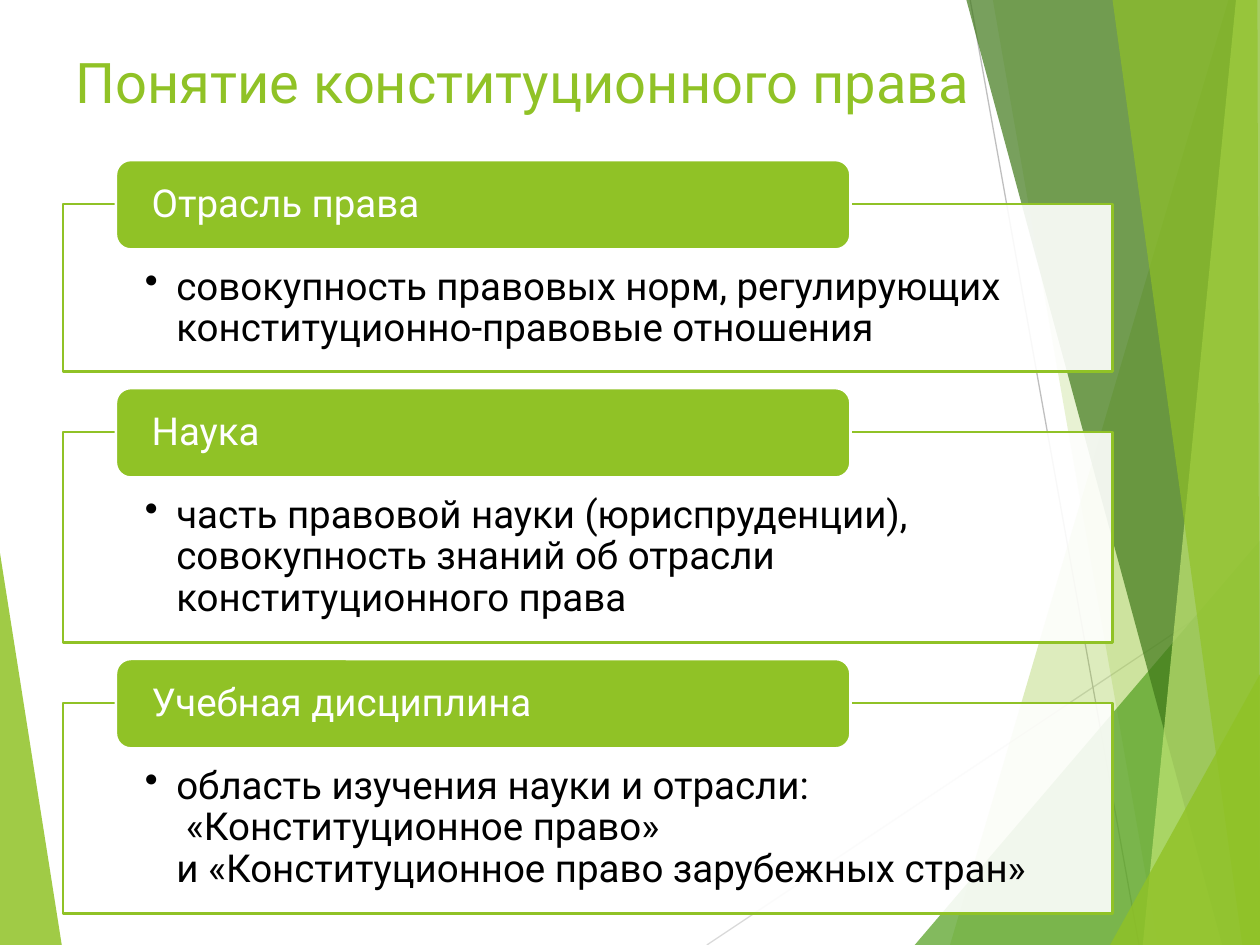
from lxml.etree import SubElement
from pptx import Presentation
from pptx.dml.color import RGBColor
from pptx.enum.shapes import MSO_CONNECTOR, MSO_SHAPE
from pptx.enum.text import MSO_ANCHOR, MSO_AUTO_SIZE, PP_ALIGN
from pptx.oxml.ns import qn
from pptx.util import Inches, Pt

GREEN, WHITE, BLACK = "90C226", "FFFFFF", "000000"

prs = Presentation()
prs.slide_width, prs.slide_height = Inches(10), Inches(7.5)
unit = prs.slide_width / 100  # the grid has 100 columns and 75 rows
slide = prs.slides.add_slide(prs.slide_layouts[5])
shapes = slide.shapes


def grid(*cells):
    return [round(cell * unit) for cell in cells]


def paint(shape, fill, opacity=100, outline=None):
    shape.shadow.inherit = False
    shape.fill.solid()
    shape.fill.fore_color.rgb = RGBColor.from_string(fill)
    if opacity < 100:
        colour = shape.fill._xPr.find(qn("a:solidFill"))[0]
        SubElement(colour, qn("a:alpha"), val=str(opacity * 1000))
    if outline:
        shape.line.color.rgb = RGBColor.from_string(outline)
        shape.line.width = Pt(1.5)
    else:
        shape.line.fill.background()


# Background facets, from back to front; the thin rays lie above the left one
facets = [
    (GREEN, 85, [(0, 43.9), (4.9, 75), (0, 75)]),
    (GREEN, 30, [(97.5, 0), (75.4, 75), (100, 75), (100, 0)]),
    (GREEN, 20, [(78.8, 0), (91.9, 75), (100, 75), (100, 0)]),
    ("54A021", 72, [(72.6, 75), (100, 42.9), (100, 75)]),
    ("3F7819", 70, [(76.7, 0), (97, 75), (100, 75), (100, 0)]),
    ("C0E474", 70, [(98.1, 0), (90.7, 75), (100, 75), (100, 0)]),
    (GREEN, 65, [(88.3, 0), (98.6, 75), (100, 75), (99.8, 0)]),
    (GREEN, 80, [(88.1, 75), (100, 53.5), (100, 75)]),
]
rays = [("D9D9D9", (56.1, 75, 100, 45.7)), ("BFBFBF", (77, 0, 90.4, 75))]

for order, (colour, opacity, corners) in enumerate(facets):
    start, *others = [grid(*corner) for corner in corners]
    outline = shapes.build_freeform(*start)
    outline.add_line_segments(others, close=True)
    paint(outline.convert_to_shape(), colour, opacity)
    if order == 0:
        for ray_colour, ends in rays:
            ray = shapes.add_connector(MSO_CONNECTOR.STRAIGHT, *grid(*ends))
            ray.line.color.rgb = RGBColor.from_string(ray_colour)
            ray.line.width = Pt(0.75)
            SubElement(ray.element.spPr, qn("a:effectLst"))

# Title, brought in front of the facets
title = shapes.title
title.left, title.top, title.width, title.height = grid(5, 3, 83.3, 6.9)
title.element.getparent().append(title.element)
title.text_frame.auto_size = MSO_AUTO_SIZE.NONE
title.text_frame.vertical_anchor = MSO_ANCHOR.MIDDLE
heading = title.text_frame.paragraphs[0]
heading.alignment = PP_ALIGN.LEFT
heading_run = heading.add_run()
heading_run.text = "Понятие конституционного права"
heading_run.font.name, heading_run.font.size = "Roboto", Pt(32)
heading_run.font.color.rgb = RGBColor.from_string(GREEN)

# Three meanings: a term on a tab over the box with its definition
meanings = [
    ("Отрасль права", 13.3,
     ["совокупность правовых норм, регулирующих конституционно-правовые отношения"]),
    ("Наука", 16.7,
     ["часть правовой науки (юриспруденции), совокупность знаний об отрасли "
      "конституционного права"]),
    ("Учебная дисциплина", 16.7,
     ["область изучения науки и отрасли: ", " «Конституционное право»",
      "и «Конституционное право зарубежных стран»"]),
]
TAB_RISE, GAP = 3.5, 4.8
top = 16.2
for term, height, definition in meanings:
    box = shapes.add_shape(MSO_SHAPE.RECTANGLE, *grid(5, top, 83.3, height))
    paint(box, WHITE, 90, GREEN)
    tab = shapes.add_shape(MSO_SHAPE.ROUNDED_RECTANGLE,
                           *grid(9.2, top - TAB_RISE, 58.3, 7.1))
    paint(tab, GREEN, outline=WHITE)

    for part, lines, colour, anchor, insets in [
        (box, definition, BLACK, MSO_ANCHOR.TOP, (6.5, 5, 6.5, 1.7)),
        (tab, [term], WHITE, MSO_ANCHOR.MIDDLE, (2.5, 0, 2.5, 0)),
    ]:
        frame = part.text_frame
        frame.word_wrap = True
        frame.vertical_anchor = anchor
        (frame.margin_left, frame.margin_top,
         frame.margin_right, frame.margin_bottom) = grid(*insets)
        paragraph = frame.paragraphs[0]
        paragraph.alignment = PP_ALIGN.LEFT
        paragraph.line_spacing = 0.9
        for number, line in enumerate(lines):
            if number:
                paragraph.add_line_break()
            run = paragraph.add_run()
            run.text = line
            run.font.name, run.font.size = "Roboto", Pt(22)
            run.font.color.rgb = RGBColor.from_string(colour)

    bullet = box.text_frame.paragraphs[0]._p.get_or_add_pPr()
    bullet.set("marL", str(Inches(0.25)))
    bullet.set("indent", str(-Inches(0.25)))
    SubElement(bullet, qn("a:buChar"), char="•")
    top += height + GAP

prs.save("out.pptx")
